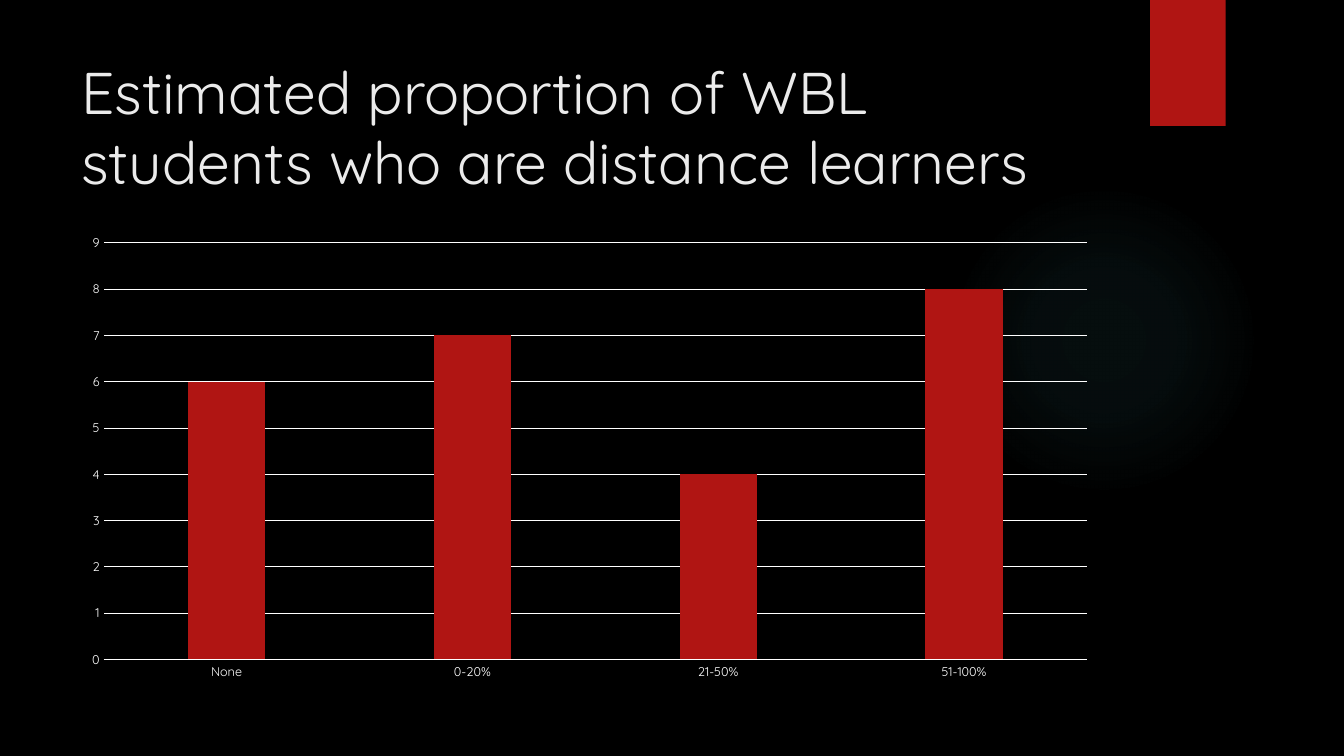
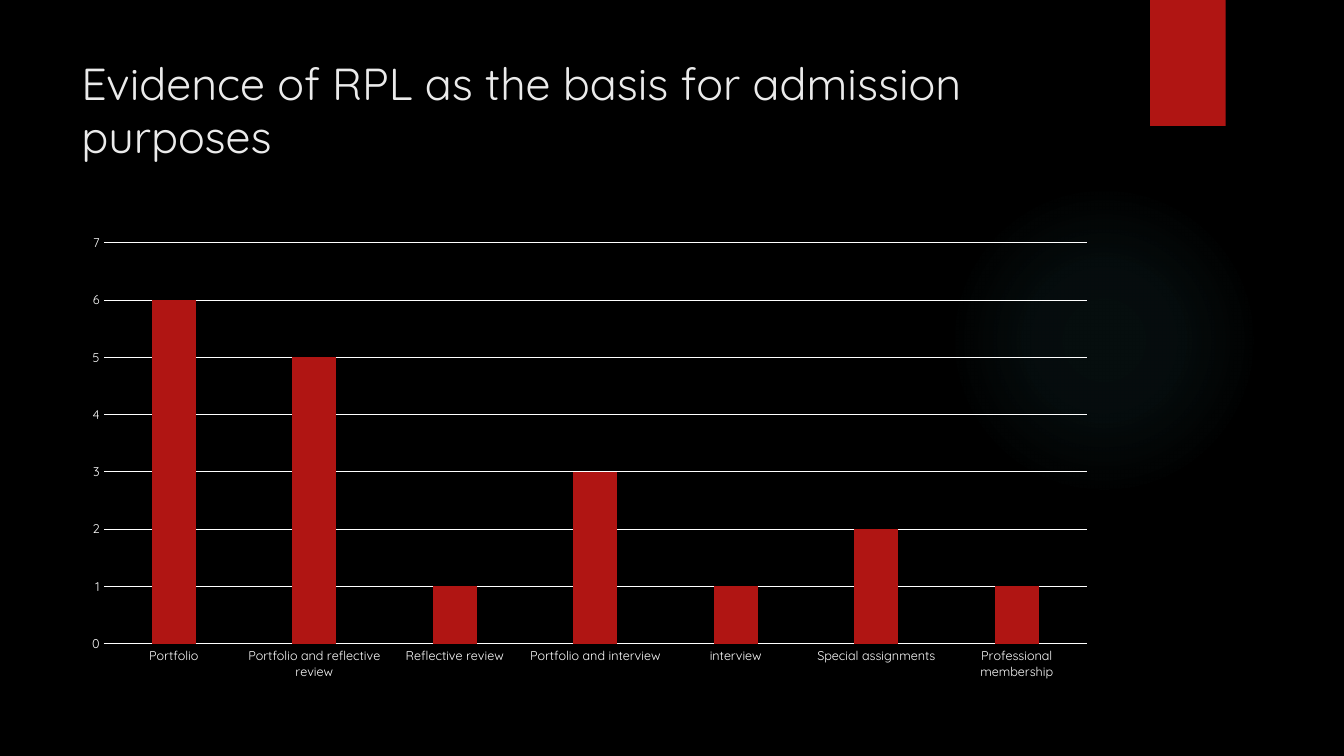
from pptx import Presentation
from pptx.chart.data import CategoryChartData as ChartData
from pptx.dml.color import RGBColor as Rgb
from pptx.enum.chart import XL_CHART_TYPE as Kind, XL_TICK_MARK as Tick
from pptx.enum.shapes import MSO_SHAPE as Shape
from pptx.enum.text import MSO_ANCHOR as Anchor, MSO_AUTO_SIZE as Fit
from pptx.oxml import parse_xml
from pptx.oxml.ns import nsdecls
from pptx.util import Pt

FONT = "Quicksand"
HUES = {"back": "000000", "red": "B01513", "title": "EBEBEB", "white": "FFFFFF", "glow": "50B9C1"}
GLOW = [(0, 7), (36, 6), (69, 0)]
BOXES = {
    "glow": (677.5, 131.8, 221.8, 221.8),
    "tab": (821.5, 0, 54, 90),
    "title": (51, 36, 741, 110.2),
    "chart": (51, 161.3, 740.2, 330.5),
}
SLIDES = [
    {
        "title": "Estimated proportion of WBL students who are distance learners",
        "size": 42,
        "top": 9,
        "bars": [("None", 6), ("0-20%", 7), ("21-50%", 4), ("51-100%", 8)],
    },
    {
        "title": "Evidence of RPL as the basis for admission purposes",
        "size": 32,
        "top": 7,
        "bars": [
            ("Portfolio", 6),
            ("Portfolio and reflective review", 5),
            ("Reflective review", 1),
            ("Portfolio and interview", 3),
            ("interview", 1),
            ("Special assignments", 2),
            ("Professional membership", 1),
        ],
    },
]


def hue(name):
    return Rgb.from_string(HUES[name])


def box(name):
    return [Pt(n) for n in BOXES[name]]


def style(font, size, name):
    font.name = FONT
    font.size = Pt(size)
    font.color.rgb = hue(name)


def paint(fill, name):
    fill.solid()
    fill.fore_color.rgb = hue(name)


def rule(line):
    line.color.rgb = hue("white")
    line.width = Pt(0.75)


def add_shape(slide, kind, name):
    shape = slide.shapes.add_shape(kind, *box(name))
    shape.shadow.inherit = False
    shape.line.fill.background()
    return shape


def add_base(slide):
    paint(slide.background.fill, "back")
    glow = add_shape(slide, Shape.OVAL, "glow")
    stops = "".join(
        f'<a:gs pos="{pos * 1000}"><a:srgbClr val="{HUES["glow"]}">'
        f'<a:alpha val="{alpha * 1000}"/></a:srgbClr></a:gs>'
        for pos, alpha in GLOW
    )
    grad = parse_xml(
        f'<a:gradFill {nsdecls("a")}><a:gsLst>{stops}</a:gsLst><a:path path="circle">'
        '<a:fillToRect l="50000" t="50000" r="50000" b="50000"/></a:path></a:gradFill>'
    )
    glow._element.spPr.insert(2, grad)
    tab = add_shape(slide, Shape.RECTANGLE, "tab")
    paint(tab.fill, "red")


def add_title(slide, text, size):
    frame = slide.shapes.add_textbox(*box("title")).text_frame
    frame.word_wrap = True
    frame.auto_size = Fit.TEXT_TO_FIT_SHAPE
    frame.vertical_anchor = Anchor.TOP
    para = frame.paragraphs[0]
    para.text = text
    style(para.font, size, "title")


def add_bars(slide, bars, top):
    names, vals = zip(*bars)
    data = ChartData()
    data.categories = names
    data.add_series("Series 1", vals)
    chart = slide.shapes.add_chart(Kind.COLUMN_CLUSTERED, *box("chart"), data).chart
    chart.has_title = False
    chart.has_legend = False
    style(chart.font, 10, "white")
    for axis in (chart.category_axis, chart.value_axis):
        axis.major_tick_mark = axis.minor_tick_mark = Tick.NONE
        style(axis.tick_labels.font, 9, "white")
    rule(chart.category_axis.format.line)
    scale = chart.value_axis
    scale.minimum_scale = 0
    scale.maximum_scale = top
    scale.major_unit = 1
    scale.format.line.fill.background()
    rule(scale.major_gridlines.format.line)
    plot = chart.plots[0]
    plot.vary_by_categories = False
    plot.gap_width = 219
    plot.overlap = -27
    paint(plot.series[0].format.fill, "red")


def main():
    deck = Presentation()
    deck.slide_width, deck.slide_height = Pt(960), Pt(540)
    for item in SLIDES:
        slide = deck.slides.add_slide(deck.slide_layouts[6])
        add_base(slide)
        add_title(slide, item["title"], item["size"])
        add_bars(slide, item["bars"], item["top"])
    deck.save("out.pptx")


if __name__ == "__main__":
    main()
